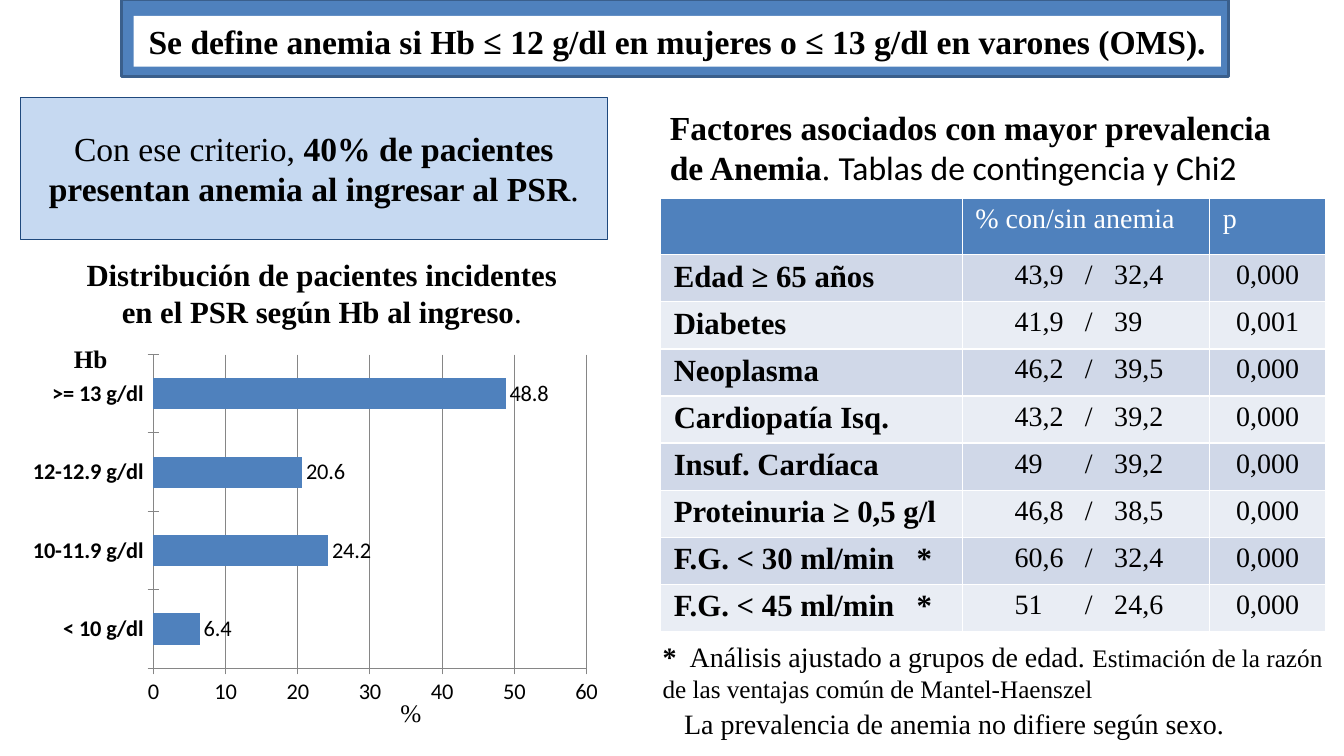
from lxml.etree import SubElement
from pptx import Presentation
from pptx.chart.data import CategoryChartData
from pptx.dml.color import RGBColor
from pptx.enum.chart import XL_CHART_TYPE, XL_LABEL_POSITION, XL_TICK_MARK
from pptx.enum.shapes import MSO_SHAPE
from pptx.enum.text import MSO_ANCHOR, PP_ALIGN
from pptx.oxml.ns import qn
from pptx.util import Cm, Pt

SERIF, SANS = "Times New Roman", "Calibri"
BLUE, BLACK, WHITE, GREY = "4F81BD", "000000", "FFFFFF", "868686"
BANDS = ["D0D8E8", "E9EDF4"]

HB_GROUPS = [("< 10 g/dl", 6.4), ("10-11.9 g/dl", 24.2),
             ("12-12.9 g/dl", 20.6), (">= 13 g/dl", 48.8)]
FACTORS = [
    ("Edad ≥ 65 años", "43,9\t/\t32,4", "0,000"),
    ("Diabetes", "41,9\t/\t39", "0,001"),
    ("Neoplasma", "46,2\t/\t39,5", "0,000"),
    ("Cardiopatía Isq.", "43,2\t/\t39,2", "0,000"),
    ("Insuf. Cardíaca", "49\t/\t39,2", "0,000"),
    ("Proteinuria ≥ 0,5 g/l", "46,8\t/\t38,5", "0,000"),
    ("F.G. < 30 ml/min\t*", "60,6\t/\t32,4", "0,000"),
    ("F.G. < 45 ml/min\t*", "51\t/\t24,6", "0,000"),
]


def rgb(value):
    return RGBColor.from_string(value)


def style_font(font, size, bold=False, color=BLACK, name=SERIF):
    font.size, font.bold, font.name = Pt(size), bold, name
    font.color.rgb = rgb(color)


def set_tabs(p, stops):
    tabs = SubElement(p._p.get_or_add_pPr(), qn("a:tabLst"))
    for stop in stops:
        SubElement(tabs, qn("a:tab"), pos=str(Cm(stop)), algn="l")


def write(tf, lines, size, bold=False, color=BLACK, align=PP_ALIGN.LEFT, tabs=()):
    for i, line in enumerate(lines):
        p = tf.add_paragraph() if i else tf.paragraphs[0]
        p.alignment = align
        if tabs:
            set_tabs(p, tabs)
        style_font(p.font, size, bold, color)
        for text, changes in line:
            r = p.add_run()
            r.text = text
            for key, value in changes.items():
                setattr(r.font, key, value)


def plain(text):
    return [(text, {})]


def add_box(slide, x, y, w, h, fill, line=None, line_width=1):
    sp = slide.shapes.add_shape(MSO_SHAPE.RECTANGLE, Cm(x), Cm(y), Cm(w), Cm(h))
    sp.shadow.inherit = False
    sp.fill.solid()
    sp.fill.fore_color.rgb = rgb(fill)
    if line:
        sp.line.color.rgb = rgb(line)
        sp.line.width = Pt(line_width)
    else:
        sp.line.fill.background()
    sp.text_frame.vertical_anchor = MSO_ANCHOR.MIDDLE
    return sp


def add_text(slide, x, y, w, h, lines, size, wrap=False, **style):
    tf = slide.shapes.add_textbox(Cm(x), Cm(y), Cm(w), Cm(h)).text_frame
    tf.word_wrap = wrap
    write(tf, lines, size, **style)


def add_banner(slide, x, y, w, h):
    add_box(slide, x, y, w, h, BLUE, "3A5F8C", 2)
    tf = add_box(slide, x + 0.3, y + 0.4, w - 0.5, h - 0.65, WHITE).text_frame
    tf.word_wrap = False
    text = "Se define anemia si Hb ≤ 12 g/dl en mujeres o ≤ 13 g/dl en varones (OMS)."
    write(tf, [plain(text)], 24, bold=True, align=PP_ALIGN.CENTER)


def add_hb_chart(slide, x, y, w, h):
    data = CategoryChartData()
    data.categories = [name for name, _ in HB_GROUPS]
    data.add_series("Series 1", [value for _, value in HB_GROUPS])
    chart = slide.shapes.add_chart(
        XL_CHART_TYPE.BAR_CLUSTERED, Cm(x), Cm(y), Cm(w), Cm(h), data).chart
    chart.has_legend = chart.has_title = False
    style_font(chart.font, 16, name=SANS)

    plot = chart.plots[0]
    plot.gap_width, plot.vary_by_categories = 150, False
    fill = plot.series[0].format.fill
    fill.solid()
    fill.fore_color.rgb = rgb(BLUE)
    plot.has_data_labels = True
    plot.data_labels.show_value = True
    plot.data_labels.position = XL_LABEL_POSITION.OUTSIDE_END

    names, values = chart.category_axis, chart.value_axis
    for axis in (names, values):
        axis.major_tick_mark = XL_TICK_MARK.CROSS
        axis.format.line.color.rgb = rgb(GREY)
    style_font(names.tick_labels.font, 16, bold=True, name=SANS)
    values.minimum_scale, values.maximum_scale, values.major_unit = 0, 60, 10
    values.major_gridlines.format.line.color.rgb = rgb(GREY)

    area = chart._chartSpace.chart.plotArea
    for old in area.findall(qn("c:layout")):
        area.remove(old)
    layout = SubElement(area, qn("c:layout"))
    area.insert(0, layout)
    manual = SubElement(layout, qn("c:manualLayout"))
    for tag, value in [("layoutTarget", "inner"), ("xMode", "edge"), ("yMode", "edge"),
                       ("x", "0.23"), ("y", "0.02"), ("w", "0.73"), ("h", "0.86")]:
        SubElement(manual, qn(f"c:{tag}"), val=value)


def add_distribution(slide, x, y, w, h):
    center = PP_ALIGN.CENTER
    tf = add_box(slide, x, y, w, 3.58, "C6D9F1", "1F497D", 0.75).text_frame
    tf.word_wrap = True
    write(tf, [[("Con ese criterio, ", {}),
                ("40% de pacientes presentan anemia al ingresar al PSR", {"bold": True}),
                (".", {})]], 24, align=center)
    add_text(slide, x + 1.2, y + 3.88, 12.8, 2.13,
             [plain("Distribución de pacientes incidentes"),
              [("en el PSR según Hb al ingreso", {}), (".", {"bold": False})]],
             22, bold=True, align=center)
    add_hb_chart(slide, x - 0.08, y + 6.3, w + 0.15, h - 6.3)
    add_text(slide, x + 9.33, y + 15, 1.04, 1.02, [plain("%")], 18)
    add_text(slide, x + 1.1, y + 6.07, 1.37, 1.02, [plain("Hb")], 18, bold=True)


def add_factor_table(slide, x, y, w, h):
    head = 1.42
    rows = [("", "% con/sin anemia", "p")] + FACTORS
    table = slide.shapes.add_table(len(rows), 3, Cm(x), Cm(y), Cm(w), Cm(h)).table
    for column, width in zip(table.columns, (7.6, 6.24, w - 13.84)):
        column.width = Cm(width)
    for i, row in enumerate(rows):
        table.rows[i].height = Cm((h - head) / len(FACTORS) if i else head)
        for j, text in enumerate(row):
            cell = table.cell(i, j)
            cell.margin_left = Cm(1.32 if i and j == 1 else 0.33)
            cell.margin_right = Cm(0.33)
            cell.fill.solid()
            cell.fill.fore_color.rgb = rgb(BANDS[(i - 1) % 2] if i else BLUE)
            if i == 0:
                style = dict(size=20, color=WHITE)
            else:
                style = [dict(size=22, bold=True, tabs=[6.12] if "\t" in text else []),
                         dict(size=20, tabs=[1.77, 2.51]),
                         dict(size=20, align=PP_ALIGN.CENTER)][j]
            write(cell.text_frame, [plain(text)] if text else [[]], **style)


def add_factors(slide, x, y, w, h):
    add_text(slide, x + 0.13, y, 16, 2.31,
             [plain("Factores asociados con mayor prevalencia"),
              [("de Anemia", {}), (". ", {"bold": False}),
               ("Tablas de contingencia y Chi2", {"bold": False, "name": SANS})]],
             24, bold=True)
    add_factor_table(slide, x + 0.15, y + 2.43, w, h - 5.33)
    add_text(slide, x - 0.05, y + 13.43, w + 0.67, 1.88,
             [[("*", {"bold": True}), ("\tAnálisis ajustado a grupos de edad. ", {}),
               ("Estimación de la razón de las ventajas común de Mantel-Haenszel",
                {"size": Pt(18)})]], 20, wrap=True, tabs=[0.68])
    add_text(slide, x + 0.49, y + 15.11, 14.22, 1.12,
             [plain("La prevalencia de anemia no difiere según sexo.")], 20)


def main():
    prs = Presentation()
    prs.slide_width, prs.slide_height = Cm(33.87), Cm(19.05)
    slide = prs.slides.add_slide(prs.slide_layouts[6])
    add_banner(slide, 3.07, 0, 27.9, 1.93)
    add_distribution(slide, 0.51, 2.45, 14.8, 15.5)
    add_factors(slide, 16.5, 2.57, 16.75, 16.23)
    prs.save("out.pptx")


if __name__ == "__main__":
    main()
